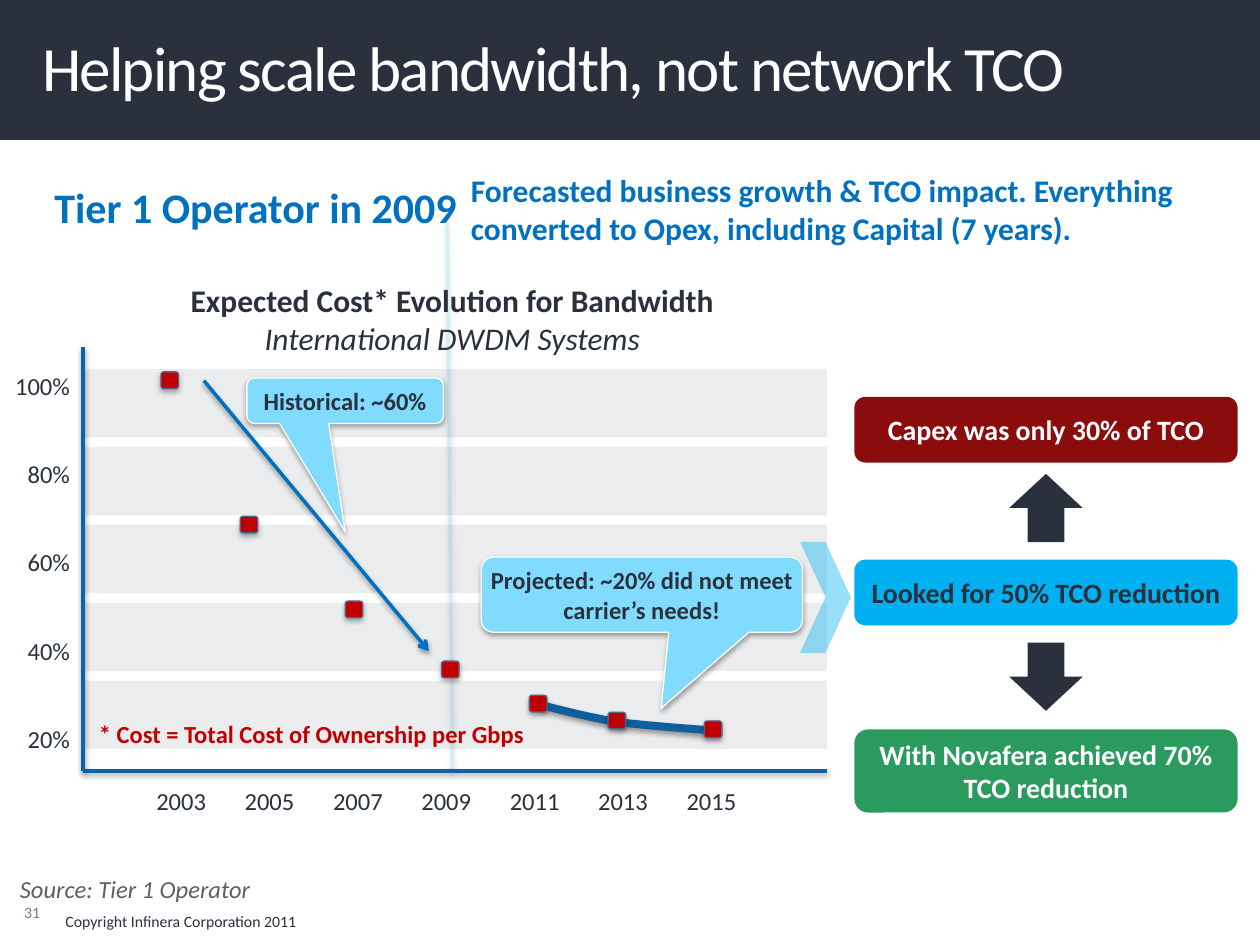
from dataclasses import dataclass

from lxml.etree import SubElement
from pptx import Presentation
from pptx.dml.color import RGBColor
from pptx.enum.shapes import MSO_CONNECTOR as Line, MSO_SHAPE as Shape
from pptx.enum.text import MSO_ANCHOR as Anchor, PP_ALIGN as Align
from pptx.oxml.ns import qn
from pptx.util import Pt


@dataclass(frozen=True)
class Theme:
    font: str = "Calibri"
    dark: str = "2A313D"
    white: str = "FFFFFF"
    heading: str = "0070C0"
    axis: str = "0C64A6"
    marker: str = "C00000"
    marker_edge: str = "526384"
    callout: str = "81DBFF"
    guide: str = "97E4FF"
    target: str = "00B0F0"
    capex: str = "8B0C0C"
    success: str = "2A9A5F"
    source: str = "5F5F5F"
    number: str = "6E7F9B"
    title_size: int = 36
    head_size: int = 24
    sub_size: int = 18
    box_size: int = 16
    label_size: int = 14
    small_size: int = 9


T = Theme()


def color(value):
    return RGBColor.from_string(value)


def set_alpha(item, percent):
    for clr in item._element.spPr.iter(qn("a:srgbClr")):
        SubElement(clr, qn("a:alpha"), val=str(percent * 1000))


def set_shadow(item, on, opacity=38):
    """Replace the theme shadow by a soft one below, or by none."""
    effects = SubElement(item._element.spPr, qn("a:effectLst"))
    if on:
        outer = SubElement(effects, qn("a:outerShdw"), blurRad=str(Pt(3.1)),
                           dist=str(Pt(1.7)), dir="5400000", rotWithShape="0")
        clr = SubElement(outer, qn("a:srgbClr"), val="000000")
        SubElement(clr, qn("a:alpha"), val=str(opacity * 1000))


def write(frame, lines, size, ink, align=Align.LEFT, anchor=Anchor.TOP,
          inset=(7.2, 3.6), wrap=True, **style):
    """Fill a text frame; each line is a text or a (text, font values) pair."""
    side, top = map(Pt, inset)
    layout = {"word_wrap": wrap, "vertical_anchor": anchor, "margin_left": side,
              "margin_right": side, "margin_top": top, "margin_bottom": top}
    for key, value in layout.items():
        setattr(frame, key, value)
    for i, line in enumerate(lines):
        text, extra = line if isinstance(line, tuple) else (line, {})
        para = frame.paragraphs[0] if i == 0 else frame.add_paragraph()
        para.alignment = align
        run = para.add_run()
        run.text = text
        run.font.color.rgb = color(ink)
        values = {"name": T.font, "size": Pt(size), **style, **extra}
        for key, value in values.items():
            setattr(run.font, key, value)


def add_text(slide, x, y, w, h, *lines, **text):
    box = slide.shapes.add_textbox(Pt(x), Pt(y), Pt(w), Pt(h))
    write(box.text_frame, lines, **text)
    return box


def add_block(slide, kind, x, y, w, h, fill, edge=None, alpha=None, shadow=False):
    block = slide.shapes.add_shape(kind, Pt(x), Pt(y), Pt(w), Pt(h))
    block.fill.solid()
    block.fill.fore_color.rgb = color(fill)
    if edge:
        block.line.color.rgb = color(edge)
        block.line.width = Pt(0.75)
    else:
        block.line.fill.background()
    if alpha:
        set_alpha(block, alpha)
    set_shadow(block, shadow, 35)
    return block


def add_line(slide, x1, y1, x2, y2, ink, alpha=None, arrow=False):
    line = slide.shapes.add_connector(Line.STRAIGHT, Pt(x1), Pt(y1), Pt(x2), Pt(y2))
    line.line.color.rgb = color(ink)
    line.line.width = Pt(2)
    if alpha:
        set_alpha(line, alpha)
    if arrow:
        SubElement(line.line._get_or_add_ln(), qn("a:tailEnd"), type="arrow")
    set_shadow(line, True)


def add_callout(slide, x, y, w, h, text, tip):
    bubble = add_block(slide, Shape.ROUNDED_RECTANGULAR_CALLOUT, x, y, w, h,
                       T.callout, edge=T.white, shadow=True)
    bubble.adjustments[0], bubble.adjustments[1] = tip
    write(bubble.text_frame, [text], T.label_size, T.dark, Align.CENTER,
          Anchor.MIDDLE, inset=(0, 0), bold=True)


def bezier(p0, p1, p2, p3, steps=12):
    for t in (i / steps for i in range(1, steps + 1)):
        s = 1 - t
        yield tuple(s**3 * a + 3 * s * s * t * b + 3 * s * t * t * c + t**3 * d
                    for a, b, c, d in zip(p0, p1, p2, p3))


def header(slide, x, y, w, h):
    add_block(slide, Shape.RECTANGLE, x, y, w, h, T.dark)
    title = add_text(slide, x + 24, y + 5, w - 48, 73,
                     "Helping scale bandwidth, not network TCO", size=T.title_size,
                     ink=T.white, anchor=Anchor.MIDDLE, inset=(0, 3.6))
    para = title.text_frame.paragraphs[0]
    para.line_spacing = Pt(36)
    para.runs[0]._r.get_or_add_rPr().set("spc", "-100")


def subtitles(slide, x, y):
    add_text(slide, x, y + 6, 260, 36, "Tier 1 Operator in 2009",
             size=T.head_size, ink=T.heading, bold=True, wrap=False)
    add_text(slide, x + 238, y, 445, 51,
             "Forecasted business growth & TCO impact. "
             "Everything converted to Opex, including Capital (7 years).",
             size=T.sub_size, ink=T.heading, bold=True)


def cost_chart(slide, x, y, w, h):
    # Marker of the year 2009
    add_line(slide, x + 208, y - 70.5, x + 211, y + h - 0.5, T.guide, alpha=30)

    # Projected curve
    start = (260, 204.5)
    bends = [(start, (274.3, 208), (288, 211.7), (305.3, 214.6)),
             ((305.3, 214.6), (322, 216.7), (352, 218.9), (363.5, 219.6))]
    pen = slide.shapes.build_freeform(Pt(x + start[0]), Pt(y + start[1]), scale=1.0)
    pen.add_line_segments([(Pt(x + px), Pt(y + py)) for bend in bends
                           for px, py in bezier(*bend)], close=False)
    curve = pen.convert_to_shape()
    curve.fill.background()
    curve.line.color.rgb = color(T.axis)
    curve.line.width = Pt(4.5)
    set_shadow(curve, True)

    # Bands, heading and axes
    for i in range(5):
        add_block(slide, Shape.RECTANGLE, x, y + 13 + 44.5 * i, w, 39, T.dark, alpha=9)
    add_text(slide, x, y - 41, w - 3, 51, "Expected Cost* Evolution for Bandwidth",
             ("International DWDM Systems", {"bold": False, "italic": True}),
             size=T.sub_size, ink=T.dark, align=Align.CENTER, bold=True)
    add_line(slide, x, y, x, y + h, T.axis)
    add_line(slide, x, y + h, x + w, y + h, T.axis)

    # Axis labels
    label = {"size": T.label_size, "ink": T.dark, "inset": (0, 3.6)}
    for i, year in enumerate(range(2003, 2016, 2)):
        add_text(slide, x + 36 + 50.5 * i, y + h + 5, 40, 24, str(year),
                 align=Align.CENTER, **label)
    for i, percent in enumerate(range(100, 0, -20)):
        add_text(slide, x - 47.5, y + 10.5 + 50.4 * i, 40, 24, f"{percent}%",
                 align=Align.RIGHT, **label)

    # Cost points
    points = [(44.5, 14.5), (89.8, 97), (149.8, 145.5), (204.8, 179.8),
              (255, 199.3), (300, 209), (355, 214)]
    for px, py in points:
        add_block(slide, Shape.ROUNDED_RECTANGLE, x + px, y + py, 10, 9.5,
                  T.marker, edge=T.marker_edge, shadow=True)
    add_text(slide, x + 2, y + 209.5, 258, 24.5,
             "* Cost = Total Cost of Ownership per Gbps",
             size=T.label_size, ink=T.marker, bold=True, wrap=False)

    # Trend and callouts
    add_line(slide, x + 69, y + 19.5, x + 197.5, y + 174, T.heading, arrow=True)
    add_callout(slide, x + 227.5, y + 120.3, 183.6, 43,
                "Projected: ~20% did not meet carrier’s needs!", (0.06, 1.51))
    add_callout(slide, x + 93.6, y + 18, 112.3, 26, "Historical: ~60%", (0, 2.88))


def outcomes(slide, x, y, w):
    boxes = [(0, 37.5, T.capex, T.white, "Capex was only 30% of TCO"),
             (93, 37.5, T.target, T.dark, "Looked for 50% TCO reduction"),
             (190, 47.5, T.success, T.white, "With Novafera achieved 70% TCO reduction")]
    for top, h, fill, ink, text in boxes:
        box = add_block(slide, Shape.ROUNDED_RECTANGLE, x, y + top, w, h, fill)
        write(box.text_frame, [text], T.box_size, ink, Align.CENTER,
              Anchor.MIDDLE, inset=(5, 3.6), bold=True)
    for kind, top in ((Shape.UP_ARROW, 44), (Shape.DOWN_ARROW, 140.4)):
        add_block(slide, kind, x + (w - 42) / 2, y + top, 42, 39, T.dark)
    add_block(slide, Shape.CHEVRON, x - 31, y + 82.8, 29, 63.4, T.target, alpha=40)


def footer(slide, x, y):
    add_text(slide, x + 4.3, y, 343, 24, "Source: Tier 1 Operator",
             size=T.label_size, ink=T.source, italic=True)
    add_text(slide, x, y + 16.5, 30, 18, "31", size=T.small_size, ink=T.number,
             align=Align.RIGHT, anchor=Anchor.MIDDLE)
    add_text(slide, x + 30.3, y + 21.7, 329, 21.5,
             "Copyright Infinera Corporation 2011", size=T.small_size, ink=T.dark)


def main():
    deck = Presentation()
    deck.slide_width, deck.slide_height = Pt(720), Pt(540)
    slide = deck.slides.add_slide(deck.slide_layouts[6])
    header(slide, 0, 0, 720, 80)
    cost_chart(slide, 47.5, 198, 425, 242.5)
    subtitles(slide, 24, 94.3)
    outcomes(slide, 488.2, 226.8, 219)
    footer(slide, 0, 496)
    deck.save("out.pptx")


if __name__ == "__main__":
    main()
